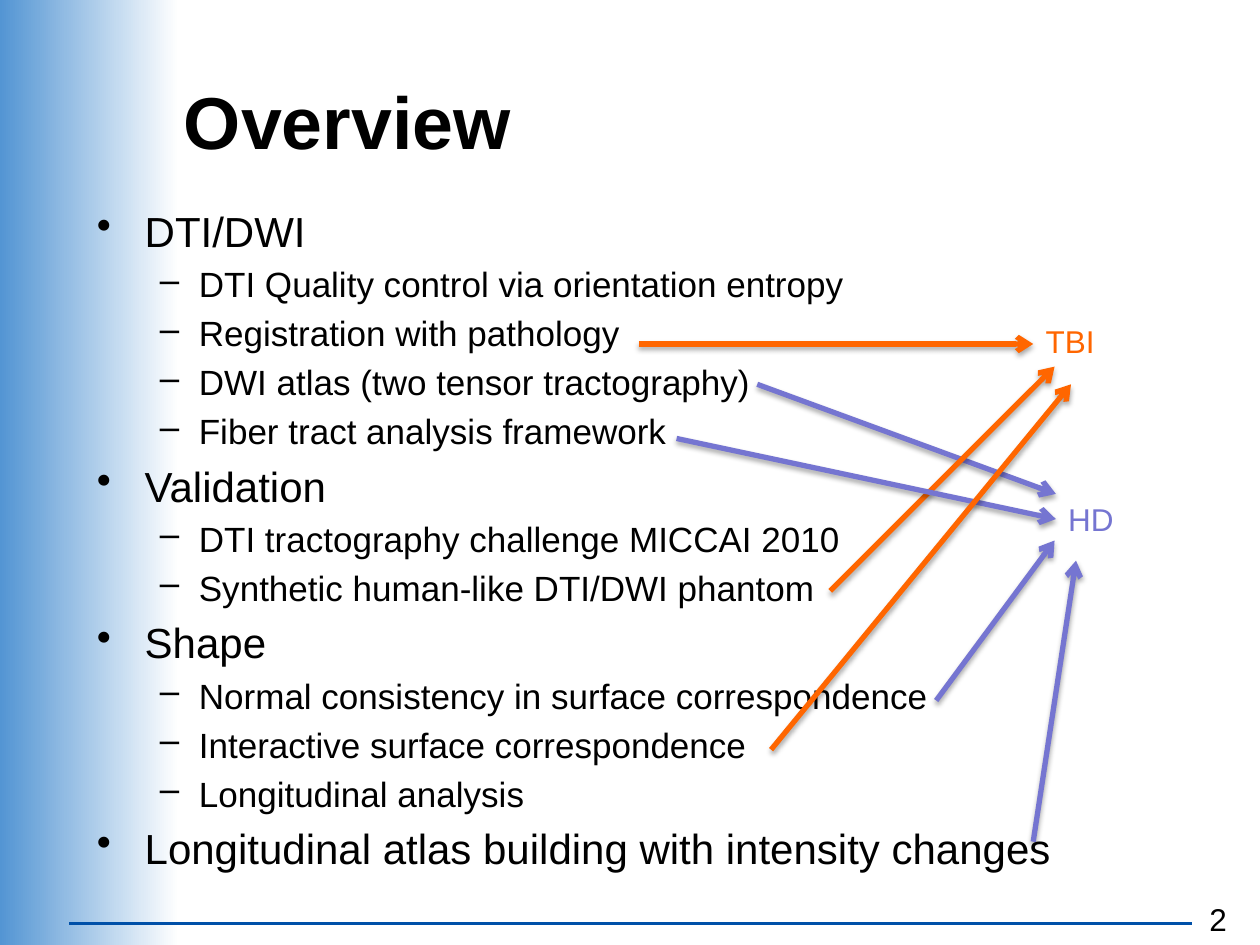
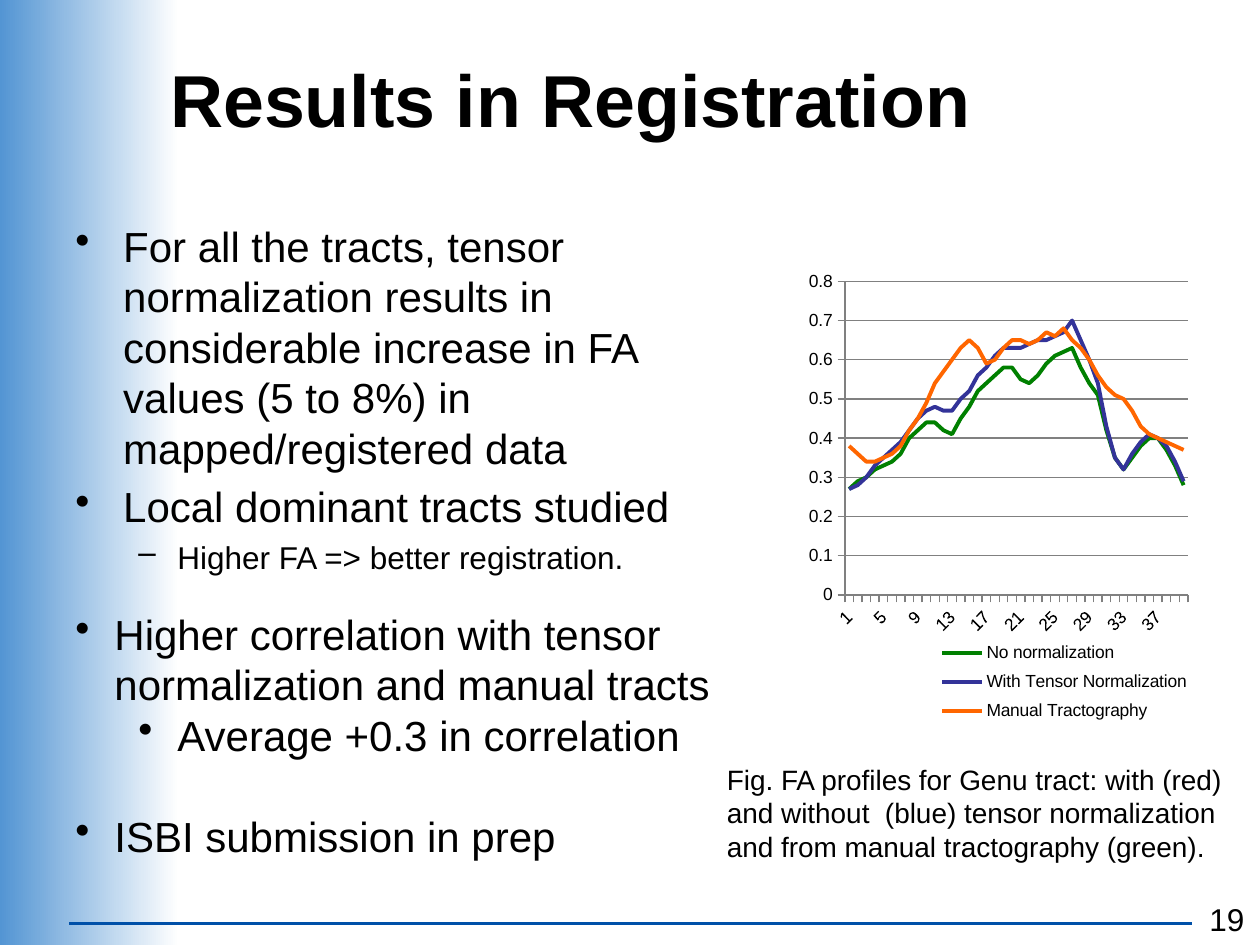
import pptx
import pptx.chart.data
import pptx.dml.color
import pptx.enum.chart
import pptx.enum.shapes
import pptx.enum.text
import pptx.oxml
import pptx.oxml.ns
import pptx.util

RGB = pptx.dml.color.RGBColor
BLACK = RGB(0x00, 0x00, 0x00)
WHITE = RGB(0xFF, 0xFF, 0xFF)
SKY = RGB(0x53, 0x95, 0xD3)
BLUE = RGB(0x00, 0x50, 0xA8)
ORANGE = RGB(0xFF, 0x66, 0x00)
LILAC = RGB(0x75, 0x75, 0xD1)
GREEN = RGB(0x00, 0x80, 0x00)
NAVY = RGB(0x33, 0x33, 0x99)
GRAY = RGB(0x80, 0x80, 0x80)
FONT = "Arial"
NS = pptx.oxml.ns.nsdecls
qn = pptx.oxml.ns.qn
Pt = pptx.util.Pt

# Text styles: size, level, bullet, left and hang in columns, gap in points
PLAIN = (18, 0, "", 0, 0, 0)
SMALL = (16, 0, "", 0, 0, 0)
HEAD = (24, 0, "•", 3.8, 3.8, 4.8)
SUB = (20, 1, "–", 8.1, 3.1, 4)
NOTE = (18, 1, "–", 8.1, 3.1, 3.6)
POINT = (24, 0, "•", 3.1, 3.1, 0)
DEEP = (24, 1, "•", 8.1, 3.1, 0)
LAST = (24, 0, "•", 3.1, 3.1, 28.8)

deck = pptx.Presentation()
deck.slide_width = pptx.util.Inches(10)
deck.slide_height = pptx.util.Inches(7.5)

# The grid has 100 columns and 100 rows
COL = deck.slide_width // 100
ROW = deck.slide_height // 100


def span(x, y, w, h):
    """Turn columns and rows into slide lengths."""
    return [round(x * COL), round(y * ROW), round(w * COL), round(h * ROW)]


def write(slide, place, lines, color=BLACK, wrap=True):
    """Add a text box with one styled paragraph for each line."""
    frame = slide.shapes.add_textbox(*span(*place)).text_frame
    frame.word_wrap = wrap
    for i, (text, style) in enumerate(lines):
        size, level, mark, left, hang, gap = style
        para = frame.add_paragraph() if i else frame.paragraphs[0]
        para.text = text
        para.level = level
        if mark:
            props = para._p.get_or_add_pPr()
            props.set("marL", str(round(left * COL)))
            props.set("indent", str(round(-hang * COL)))
            props.append(pptx.oxml.parse_xml(
                f'<a:buChar {NS("a")} char="{mark}"/>'))
        if i and gap:
            para.space_before = Pt(gap)
        font = para.runs[0].font
        font.name, font.size, font.color.rgb = FONT, Pt(size), color


# Shared parts: title, fading band, foot line and page number
STRAIGHT = pptx.enum.shapes.MSO_CONNECTOR.STRAIGHT
pages = []
for name, place, page in [
    ("Overview", (13.6, 4.4, 78.9, 16.67), "2"),
    ("Results in Registration", (12.5, 4, 82.5, 12.67), "19"),
]:
    slide = deck.slides.add_slide(deck.slide_layouts[5])
    pages.append(slide)
    title = slide.shapes.title
    title.left, title.top, title.width, title.height = span(*place)
    title.text_frame.text = name
    title.text_frame.vertical_anchor = pptx.enum.text.MSO_ANCHOR.MIDDLE
    para = title.text_frame.paragraphs[0]
    para.alignment = pptx.enum.text.PP_ALIGN.LEFT
    font = para.runs[0].font
    font.name, font.size, font.bold = FONT, Pt(42), True
    font.color.rgb = BLACK

    band = slide.shapes.add_shape(
        pptx.enum.shapes.MSO_SHAPE.RECTANGLE, *span(0, 0, 14.2, 100))
    band.shadow.inherit = False
    band.line.fill.background()
    band.fill.gradient()
    band.fill.gradient_angle = 0
    for stop, color, spot in zip(band.fill.gradient_stops, (SKY, WHITE), (0, 1)):
        stop.color.rgb = color
        stop.position = spot
    title.element.addprevious(band.element)

    foot = slide.shapes.add_connector(STRAIGHT, *span(5.5, 97.73, 94.6, 97.73))
    foot.line.color.rgb = BLUE
    foot.line.width = Pt(2)
    foot.element.spPr.append(pptx.oxml.parse_xml(f'<a:effectLst {NS("a")}/>'))
    write(slide, (95, 94.53, 5.1, 5.33), [(page, PLAIN)], wrap=False)

# Overview: topics
view, result = pages
write(view, (6.7, 21.07, 85.8, 61.47), [
    ("DTI/DWI", HEAD),
    ("DTI Quality control via orientation entropy", SUB),
    ("Registration with pathology", SUB),
    ("DWI atlas (two tensor tractography)", SUB),
    ("Fiber tract analysis framework", SUB),
    ("Validation", HEAD),
    ("DTI tractography challenge MICCAI 2010", SUB),
    ("Synthetic human-like DTI/DWI phantom", SUB),
    ("Shape", HEAD),
    ("Normal consistency in surface correspondence", SUB),
    ("Interactive surface correspondence", SUB),
    ("Longitudinal analysis", SUB),
    ("Longitudinal atlas building with intensity changes", HEAD),
])

# Overview: studies and the arrows from topics to them
write(view, (82, 33.47, 5.9, 5.33), [("TBI", PLAIN)], ORANGE, False)
write(view, (83.8, 52.27, 5.7, 5.33), [("HD", PLAIN)], LILAC, False)
for color, ends in [
    (ORANGE, (50.7, 36.4, 82, 36.4)),
    (LILAC, (60.1, 40.67, 83.8, 52.27)),
    (ORANGE, (65.9, 62.53, 83.7, 38.8)),
    (LILAC, (53.7, 46.4, 83.8, 54.93)),
    (LILAC, (74.3, 74.13, 83.7, 57.2)),
    (ORANGE, (61.2, 79.33, 85, 40.67)),
    (LILAC, (82, 89.07, 85.4, 59.33)),
]:
    arrow = view.shapes.add_connector(STRAIGHT, *span(*ends))
    arrow.line.color.rgb = color
    arrow.line.width = Pt(3)
    arrow.line._get_or_add_ln().append(pptx.oxml.parse_xml(
        f'<a:tailEnd {NS("a")} type="arrow"/>'))
    arrow.element.spPr.append(pptx.oxml.parse_xml(
        f'<a:effectLst {NS("a")}><a:outerShdw blurRad="{Pt(3.1)}" '
        f'dist="{Pt(1.8)}" dir="5400000" rotWithShape="0">'
        '<a:srgbClr val="000000"><a:alpha val="35000"/></a:srgbClr>'
        '</a:outerShdw></a:effectLst>'))

# Results: findings
write(result, (5, 22.67, 56.7, 26.67), [
    ("For all the tracts, tensor normalization results in considerable "
     "increase in FA values (5 to 8%) in mapped/registered data", HEAD),
    ("Local dominant tracts studied", HEAD),
    ("Higher FA => better registration.", NOTE),
])

# Results: chart of FA profiles
data = pptx.chart.data.CategoryChartData()
data.categories = [str(n) for n in range(1, 41)]
lines = [
    ("No normalization", GREEN, (
        0.27, 0.29, 0.3, 0.32, 0.33, 0.34, 0.36, 0.4, 0.42, 0.44,
        0.44, 0.42, 0.41, 0.45, 0.48, 0.52, 0.54, 0.56, 0.58, 0.58,
        0.55, 0.54, 0.56, 0.59, 0.61, 0.62, 0.63, 0.58, 0.54, 0.51,
        0.42, 0.35, 0.32, 0.35, 0.38, 0.4, 0.4, 0.37, 0.33, 0.28)),
    ("With Tensor Normalization", NAVY, (
        0.27, 0.28, 0.3, 0.33, 0.35, 0.37, 0.39, 0.42, 0.45, 0.47,
        0.48, 0.47, 0.47, 0.5, 0.52, 0.56, 0.58, 0.61, 0.63, 0.63,
        0.63, 0.64, 0.65, 0.65, 0.66, 0.67, 0.7, 0.65, 0.6, 0.54,
        0.43, 0.35, 0.32, 0.36, 0.39, 0.41, 0.4, 0.38, 0.34, 0.29)),
    ("Manual Tractography", ORANGE, (
        0.38, 0.36, 0.34, 0.34, 0.35, 0.36, 0.38, 0.42, 0.45, 0.49,
        0.54, 0.57, 0.6, 0.63, 0.65, 0.63, 0.59, 0.6, 0.63, 0.65,
        0.65, 0.64, 0.65, 0.67, 0.66, 0.68, 0.65, 0.63, 0.6, 0.56,
        0.53, 0.51, 0.5, 0.47, 0.43, 0.41, 0.4, 0.39, 0.38, 0.37)),
]
for name, color, vals in lines:
    data.add_series(name, vals)
chart = result.shapes.add_chart(
    pptx.enum.chart.XL_CHART_TYPE.LINE, *span(64.2, 27.73, 33.4, 51.07), data).chart
chart.has_title = False
chart.font.name, chart.font.size = FONT, Pt(10)
chart.font.color.rgb = BLACK
plot = chart.plots[0]
plot.vary_by_categories = False
for line, (name, color, vals) in zip(plot.series, lines):
    line.smooth = False
    line.marker.style = pptx.enum.chart.XL_MARKER_STYLE.NONE
    line.format.line.color.rgb = color
    line.format.line.width = Pt(2.25)

# Axes
cat, val = chart.category_axis, chart.value_axis
val.minimum_scale, val.maximum_scale, val.major_unit = 0, 0.8, 0.1
val.has_major_gridlines = True
for part in (cat, val, val.major_gridlines):
    part.format.line.color.rgb = GRAY
for axis in (cat, val):
    axis.major_tick_mark = pptx.enum.chart.XL_TICK_MARK.OUTSIDE
    axis.tick_labels.font.size = Pt(10)
root = chart.element
root.find(".//" + qn("c:catAx")).find(
    qn("c:txPr")).find(qn("a:bodyPr")).set("rot", "-2700000")
root.find(".//" + qn("c:lblOffset")).addnext(pptx.oxml.parse_xml(
    f'<c:tickLblSkip {NS("c")} val="4"/>'))

# Places of the plot and the legend, as shares of the chart
chart.has_legend = True
chart.legend.position = pptx.enum.chart.XL_LEGEND_POSITION.RIGHT
chart.legend.include_in_layout = False
for tag, spot, inner, place in [
    ("c:plotArea", 0, '<c:layoutTarget val="inner"/>', (0.08, 0.04, 0.82, 0.65)),
    ("c:legend", 1, "", (0.28, 0.77, 0.65, 0.2)),
]:
    node = root.find(".//" + qn(tag))
    for old in node.findall(qn("c:layout")):
        node.remove(old)
    sides = "".join(f'<c:{k} val="{v}"/>' for k, v in zip("xywh", place))
    node.insert(spot, pptx.oxml.parse_xml(
        f'<c:layout {NS("c")}><c:manualLayout>{inner}<c:xMode val="edge"/>'
        f'<c:yMode val="edge"/>{sides}</c:manualLayout></c:layout>'))

# Results: outlook and caption
write(result, (5, 63.73, 52.5, 33.6), [
    ("Higher correlation with tensor normalization and manual tracts", POINT),
    ("Average +0.3 in correlation", DEEP),
    ("ISBI submission in prep", LAST),
])
write(result, (56.7, 80, 41.7, 12.13), [
    ("Fig. FA profiles for Genu tract: with (red) and without  (blue) tensor "
     "normalization and from manual tractography (green).", SMALL),
])

deck.save("out.pptx")
